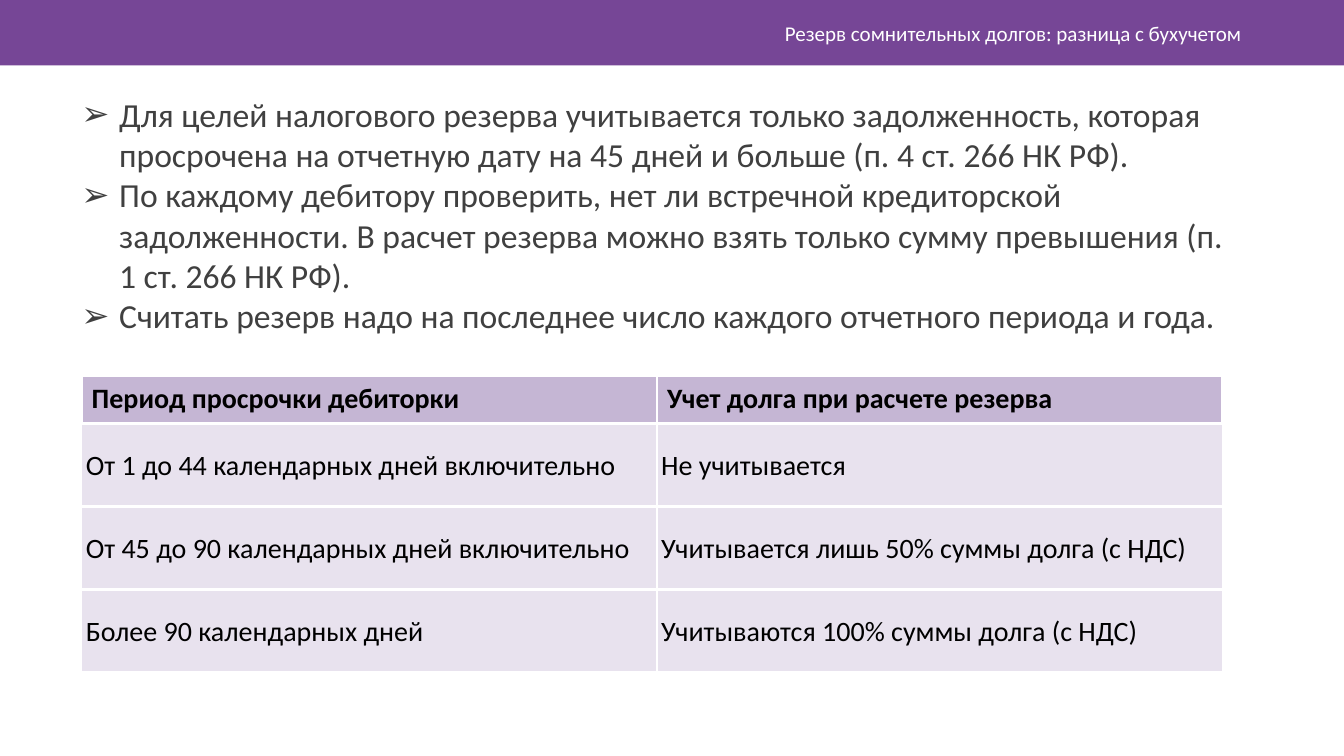
from lxml.etree import SubElement
from pptx import Presentation
from pptx.dml.color import RGBColor
from pptx.enum.shapes import MSO_SHAPE
from pptx.enum.text import MSO_ANCHOR, PP_ALIGN
from pptx.oxml import parse_xml
from pptx.oxml.ns import nsdecls, qn
from pptx.util import Pt


def color(hex_code):
    return RGBColor.from_string(hex_code)


def add_text(paragraph, text, size, hex_code, bold=False):
    run = paragraph.add_run()
    run.text = text
    run.font.name = "Calibri"
    run.font.size = Pt(size)
    run.font.bold = bold
    run.font.color.rgb = color(hex_code)


deck = Presentation()
deck.slide_width, deck.slide_height = Pt(960), Pt(540)
slide = deck.slides.add_slide(deck.slide_layouts[6])

# Header band and title
band = slide.shapes.add_shape(MSO_SHAPE.RECTANGLE, 0, 0, Pt(960), Pt(46.8))
band.shadow.inherit = False
band.fill.solid()
band.fill.fore_color.rgb = color("764696")
band.line.fill.background()

title = slide.shapes.add_textbox(Pt(255), Pt(9), Pt(639), Pt(28.8)).text_frame
title.word_wrap = True
title.vertical_anchor = MSO_ANCHOR.MIDDLE
title.paragraphs[0].alignment = PP_ALIGN.RIGHT
add_text(title.paragraphs[0], "Резерв сомнительных долгов: разница с бухучетом", 15, "FFFFFF")

# Reserve rules as a bulleted list
rules = [
    "Для целей налогового резерва учитывается только задолженность, которая "
    "просрочена на отчетную дату на 45 дней и больше (п. 4 ст. 266 НК РФ).",
    "По каждому дебитору проверить, нет ли встречной кредиторской задолженности. "
    "В расчет резерва можно взять только сумму превышения (п. 1 ст. 266 НК РФ).",
    "Считать резерв надо на последнее число каждого отчетного периода и года.",
]
rule_list = slide.shapes.add_textbox(Pt(51), Pt(63.4), Pt(843), Pt(211)).text_frame
rule_list.word_wrap = True
for index, rule in enumerate(rules):
    paragraph = rule_list.add_paragraph() if index else rule_list.paragraphs[0]
    properties = paragraph._p.get_or_add_pPr()
    properties.set("marL", str(Pt(27)))
    properties.set("indent", str(Pt(-27)))
    SubElement(properties, qn("a:buFont"), typeface="Arial")
    SubElement(properties, qn("a:buChar"), char="➢")
    add_text(paragraph, rule, 24, "404040")

# Table of overdue periods
periods = [
    ("Период просрочки дебиторки", "Учет долга при расчете резерва"),
    ("От 1 до 44 календарных дней включительно", "Не учитывается"),
    ("От 45 до 90 календарных дней включительно", "Учитывается лишь 50% суммы долга (с НДС)"),
    ("Более 90 календарных дней", "Учитываются 100% суммы долга (с НДС)"),
]
table = slide.shapes.add_table(4, 2, Pt(58.3), Pt(268.5), Pt(815), Pt(211.7)).table
table.columns[0].width, table.columns[1].width = Pt(411), Pt(404)

for row_index, row in enumerate(periods):
    is_header = row_index == 0
    table.rows[row_index].height = Pt(34 if is_header else 59.25)
    for column_index, text in enumerate(row):
        cell = table.cell(row_index, column_index)
        cell.vertical_anchor = MSO_ANCHOR.MIDDLE
        cell.margin_left = cell.margin_right = Pt(7.2 if is_header else 3)
        cell.margin_top = cell.margin_bottom = Pt(3.6 if is_header else 5)
        paragraph = cell.text_frame.paragraphs[0]
        paragraph.line_spacing = 0.9 if is_header else 1.07
        add_text(paragraph, text, 20, "000000", is_header)

        # Translucent fill
        cell.fill.solid()
        cell.fill.fore_color.rgb = color("8D6FAB")
        cell_properties = cell._tc.get_or_add_tcPr()
        tint = cell_properties.find(qn("a:solidFill")).find(qn("a:srgbClr"))
        SubElement(tint, qn("a:alpha"), val="50000" if is_header else "20000")

        # White borders, placed ahead of the fill
        side_width = 2.25 if is_header else 1
        widths = {"lnL": side_width, "lnR": side_width, "lnT": 2.25, "lnB": 2.25}
        for position, (side, width) in enumerate(widths.items()):
            border = parse_xml(
                f'<a:{side} {nsdecls("a")} w="{Pt(width)}"><a:solidFill>'
                f'<a:srgbClr val="FFFFFF"/></a:solidFill></a:{side}>'
            )
            cell_properties.insert(position, border)

deck.save("out.pptx")
